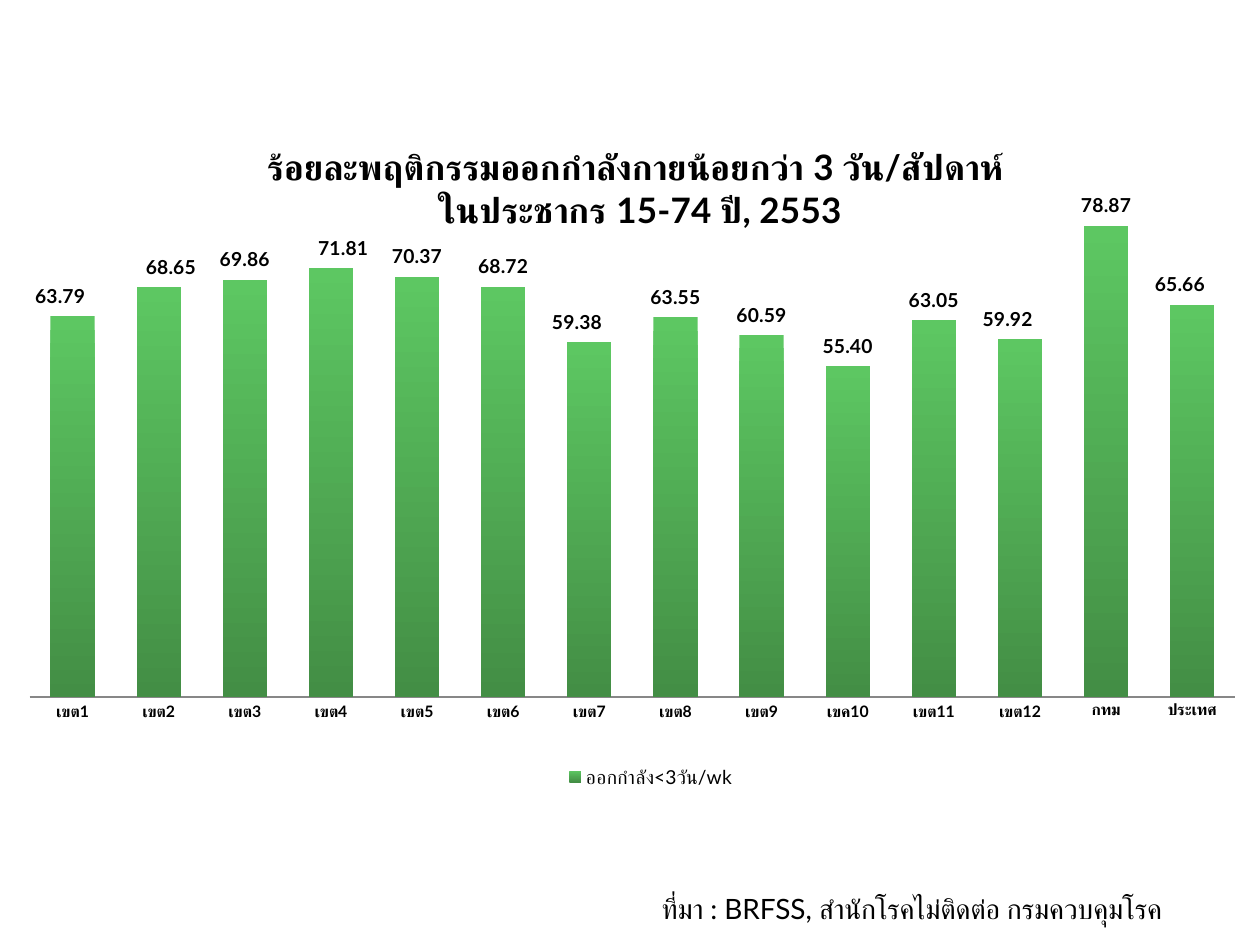
from lxml.etree import SubElement
from pptx import Presentation
from pptx.chart.data import CategoryChartData
from pptx.dml.color import RGBColor
from pptx.enum.chart import XL_CHART_TYPE, XL_LEGEND_POSITION, XL_TICK_MARK
from pptx.enum.text import MSO_AUTO_SIZE
from pptx.oxml import parse_xml
from pptx.oxml.ns import nsdecls, qn
from pptx.util import Pt

TITLE = ["ร้อยละพฤติกรรมออกกำลังกายน้อยกว่า 3 วัน/สัปดาห์ ", "ในประชากร 15-74 ปี, 2553"]
SERIES = "ออกกำลัง<3วัน/wk"
SOURCE = "ที่มา : BRFSS, สำนักโรคไม่ติดต่อ กรมควบคุมโรค"
REGIONS = [
    ("เขต1", 63.79, -0.01), ("เขต2", 68.65, 0.01), ("เขต3", 69.86, 0),
    ("เขต4", 71.81, 0.01), ("เขต5", 70.37, 0), ("เขต6", 68.72, 0),
    ("เขต7", 59.38, -0.01), ("เขต8", 63.55, 0), ("เขต9", 60.59, 0),
    ("เขค10", 55.40, 0), ("เขต11", 63.05, 0), ("เขต12", 59.92, -0.01),
    ("กทม", 78.87, 0), ("ประเทศ", 65.66, -0.01),
]
AXIS_MAX = 90
PLOT_HEIGHT = 0.78
LABEL_GAP = 0.03
NO_LEADER_EXT = (
    f"<c:extLst {nsdecls('c')}>"
    '<c:ext uri="{CE6537A1-D6FC-4f65-9D91-7224C49458BB}" '
    'xmlns:c15="http://schemas.microsoft.com/office/drawing/2012/chart">'
    '<c15:showLeaderLines val="0"/></c:ext></c:extLst>'
)


def rgb(color):
    return RGBColor.from_string(color)


def style(font, size, bold=False, name="Lato"):
    font.name = name
    font.size = Pt(size)
    font.bold = bold
    font.color.rgb = rgb("000000")


def make_layout(**values):
    layout = parse_xml(f"<c:layout {nsdecls('c')}><c:manualLayout/></c:layout>")
    for tag, value in values.items():
        SubElement(layout[0], qn(f"c:{tag}")).set("val", str(value))
    return layout


def place(parent, before, **values):
    for old in parent.findall(qn("c:layout")):
        parent.remove(old)
    parent.find(qn(before)).addprevious(make_layout(**values))


def hide_leader_lines(labels):
    for old in labels.findall(qn("c:showLeaderLines")):
        labels.remove(old)
    SubElement(labels, qn("c:showLeaderLines")).set("val", "0")
    labels.append(parse_xml(NO_LEADER_EXT))


def add_region_chart(slide):
    data = CategoryChartData(number_format="0.00")
    data.categories = [name for name, _, _ in REGIONS]
    data.add_series(SERIES, [value for _, value, _ in REGIONS])
    chart = slide.shapes.add_chart(XL_CHART_TYPE.COLUMN_STACKED, Pt(16.5), Pt(67.5),
                                   Pt(703.5), Pt(394), data).chart
    style(chart.font, 10, name="Cabin")

    tf = chart.chart_title.text_frame
    tf.text = "\n".join(TITLE)
    for p in tf.paragraphs:
        style(p.font, 20, True)
    chart.chart_title.include_in_layout = True
    title = chart.chart_title._element
    place(title, "c:overlay", xMode="edge", yMode="edge", x=0.19, y=0.03)

    chart.has_legend = True
    legend = chart.legend
    legend.position = XL_LEGEND_POSITION.TOP
    legend.include_in_layout = False
    style(legend.font, 11)
    place(legend._element, "c:overlay", xMode="edge", yMode="edge",
          x=0.43, y=0.93, w=0.15, h=0.05)

    cat = chart.category_axis
    cat.major_tick_mark = cat.minor_tick_mark = XL_TICK_MARK.NONE
    cat.format.line.color.rgb = rgb("878787")
    cat.format.line.width = Pt(0.75)
    style(cat.tick_labels.font, 9, True)
    val = chart.value_axis
    val.minimum_scale = 0
    val.maximum_scale = AXIS_MAX
    val.has_major_gridlines = False
    val.visible = False

    plot = chart.plots[0]
    plot.gap_width = 95
    plot.overlap = 100
    plot.vary_by_categories = False
    place(plot._element.getparent(), "c:barChart", layoutTarget="inner",
          xMode="edge", yMode="edge", x=0, y=0.06, w=0.98, h=PLOT_HEIGHT)

    series = plot.series[0]
    fill = series.format.fill
    fill.gradient()
    fill.gradient_angle = 270
    for stop, color in zip(fill.gradient_stops, ("5DC762", "438E45")):
        stop.color.rgb = rgb(color)
    labels = series.data_labels
    labels.show_value = True
    labels.number_format = "0.00"
    labels.number_format_is_linked = False
    style(labels.font, 11, True)
    for i, (_, value, dx) in enumerate(REGIONS):
        style(series.points[i].data_label.font, 11, True)
        rise = value / AXIS_MAX * PLOT_HEIGHT / 2 + LABEL_GAP
        label = labels._element.findall(qn("c:dLbl"))[i]
        label.find(qn("c:idx")).addnext(make_layout(x=dx, y=round(-rise, 3)))
    hide_leader_lines(labels._element)


def add_source(slide):
    tf = slide.shapes.add_textbox(Pt(371), Pt(506), Pt(338), Pt(26.6)).text_frame
    tf.word_wrap = False
    tf.auto_size = MSO_AUTO_SIZE.SHAPE_TO_FIT_TEXT
    tf.text = SOURCE
    style(tf.paragraphs[0].font, 16)


prs = Presentation()
prs.slide_width, prs.slide_height = Pt(720), Pt(540)
s = prs.slides.add_slide(prs.slide_layouts[6])
add_region_chart(s)
add_source(s)
prs.save("out.pptx")
